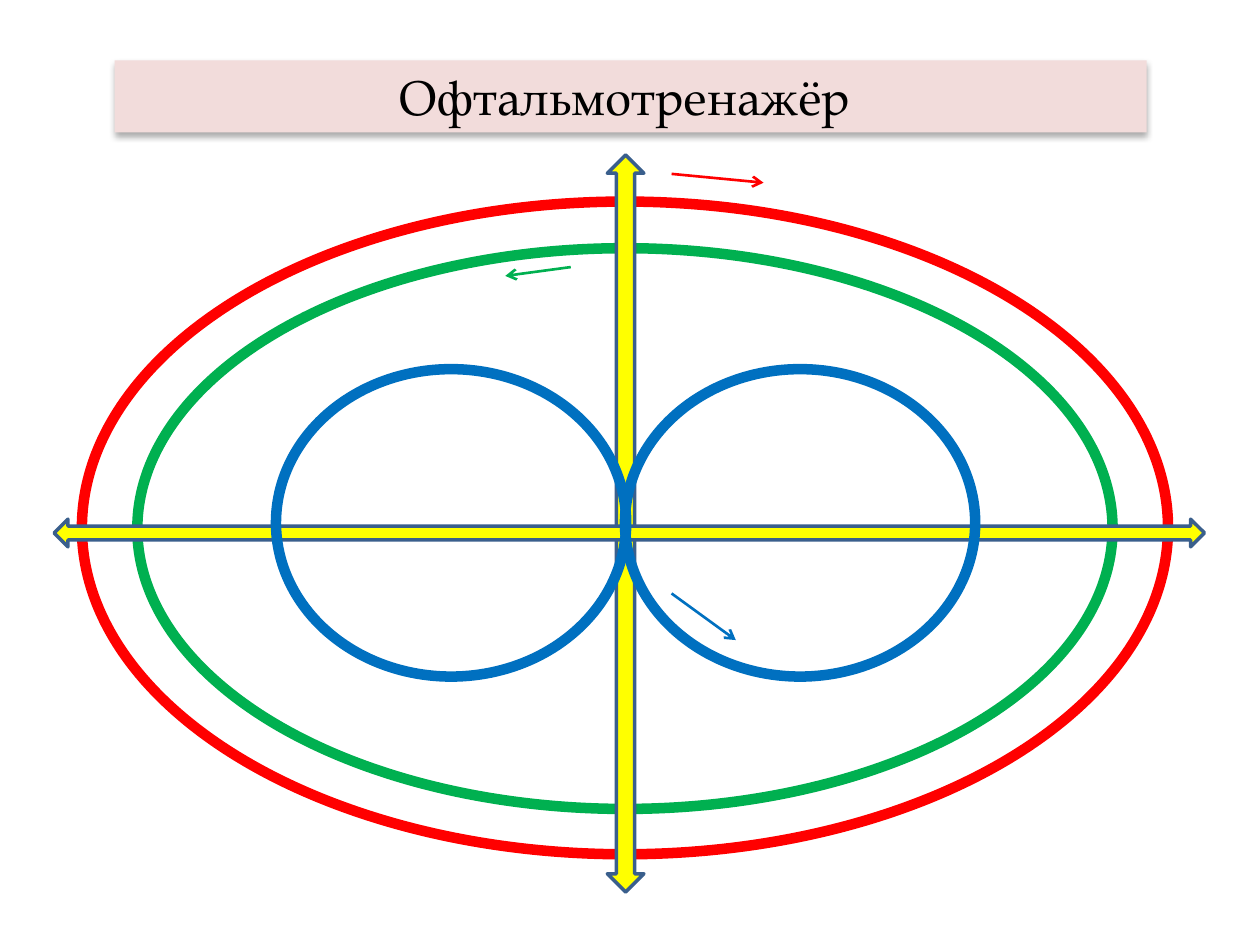
import lxml.etree
import pptx
import pptx.dml.color
import pptx.enum.shapes
import pptx.enum.text
import pptx.oxml
import pptx.oxml.ns
import pptx.util

Inches, Pt = pptx.util.Inches, pptx.util.Pt
RGBColor = pptx.dml.color.RGBColor
MSO_SHAPE = pptx.enum.shapes.MSO_SHAPE
qn = pptx.oxml.ns.qn

RED = RGBColor(0xFF, 0x00, 0x00)
GREEN = RGBColor(0x00, 0xB0, 0x50)
BLUE = RGBColor(0x00, 0x70, 0xC0)
YELLOW = RGBColor(0xFF, 0xFF, 0x00)
AXIS_EDGE = RGBColor(0x3A, 0x5F, 0x8C)
PINK = RGBColor(0xF2, 0xDC, 0xDB)
BLACK = RGBColor(0x00, 0x00, 0x00)

prs = pptx.Presentation()
prs.slide_width, prs.slide_height = Inches(10), Inches(7.5)
slide = prs.slides.add_slide(prs.slide_layouts[5])

# Title band with a soft shadow below it
title = slide.shapes.title
title.left, title.top = Inches(0.91), Inches(0.48)
title.width, title.height = Inches(8.19), Inches(0.57)
title.fill.solid()
title.fill.fore_color.rgb = PINK
title.text_frame.vertical_anchor = pptx.enum.text.MSO_ANCHOR.MIDDLE
heading = title.text_frame.paragraphs[0]
heading.alignment = pptx.enum.text.PP_ALIGN.CENTER
heading_run = heading.add_run()
heading_run.text = "Офтальмотренажёр "
heading_run.font.size = Pt(28)
heading_run.font.name = "TeX Gyre Pagella"
heading_run.font.color.rgb = BLACK
title._element.spPr.append(pptx.oxml.parse_xml(
    '<a:effectLst xmlns:a="http://schemas.openxmlformats.org/drawingml/2006/main">'
    f'<a:outerShdw blurRad="{Pt(3.5)}" dist="{Pt(2.2)}" dir="5400000" rotWithShape="0">'
    '<a:srgbClr val="000000"><a:alpha val="32000"/></a:srgbClr>'
    '</a:outerShdw></a:effectLst>'))

# Gaze tracks and axes, from back to front
tracks = [
    (MSO_SHAPE.OVAL, 0.65, 1.6, 8.62, 5.18, None, RED, 6),
    (MSO_SHAPE.OVAL, 1.09, 1.97, 7.74, 4.45, None, GREEN, 6),
    (MSO_SHAPE.UP_DOWN_ARROW, 4.82, 1.23, 0.29, 5.85, YELLOW, AXIS_EDGE, 2),
    (MSO_SHAPE.LEFT_RIGHT_ARROW, 0.43, 4.12, 9.13, 0.22, YELLOW, AXIS_EDGE, 2),
    (MSO_SHAPE.OVAL, 2.19, 2.93, 2.78, 2.44, None, BLUE, 6),
    (MSO_SHAPE.OVAL, 4.96, 2.93, 2.78, 2.44, None, BLUE, 6),
]
for preset, left, top, width, height, fill, edge, weight in tracks:
    track = slide.shapes.add_shape(
        preset, Inches(left), Inches(top), Inches(width), Inches(height))
    track.shadow.inherit = False
    if fill is None:
        track.fill.background()
    else:
        track.fill.solid()
        track.fill.fore_color.rgb = fill
    track.line.color.rgb = edge
    track.line.width = Pt(weight)

# Direction of movement along each track
directions = [
    (5.33, 1.38, 6.06, 1.45, RED),
    (4.53, 2.12, 4.01, 2.19, GREEN),
    (5.33, 4.71, 5.84, 5.08, BLUE),
]
for x1, y1, x2, y2, color in directions:
    direction = slide.shapes.add_connector(
        pptx.enum.shapes.MSO_CONNECTOR.STRAIGHT,
        Inches(x1), Inches(y1), Inches(x2), Inches(y2))
    direction.line.color.rgb = color
    direction.line.width = Pt(1.5)
    lxml.etree.SubElement(direction.line._get_or_add_ln(), qn("a:tailEnd"), type="arrow")
    lxml.etree.SubElement(direction._element.spPr, qn("a:effectLst"))

prs.save("out.pptx")
